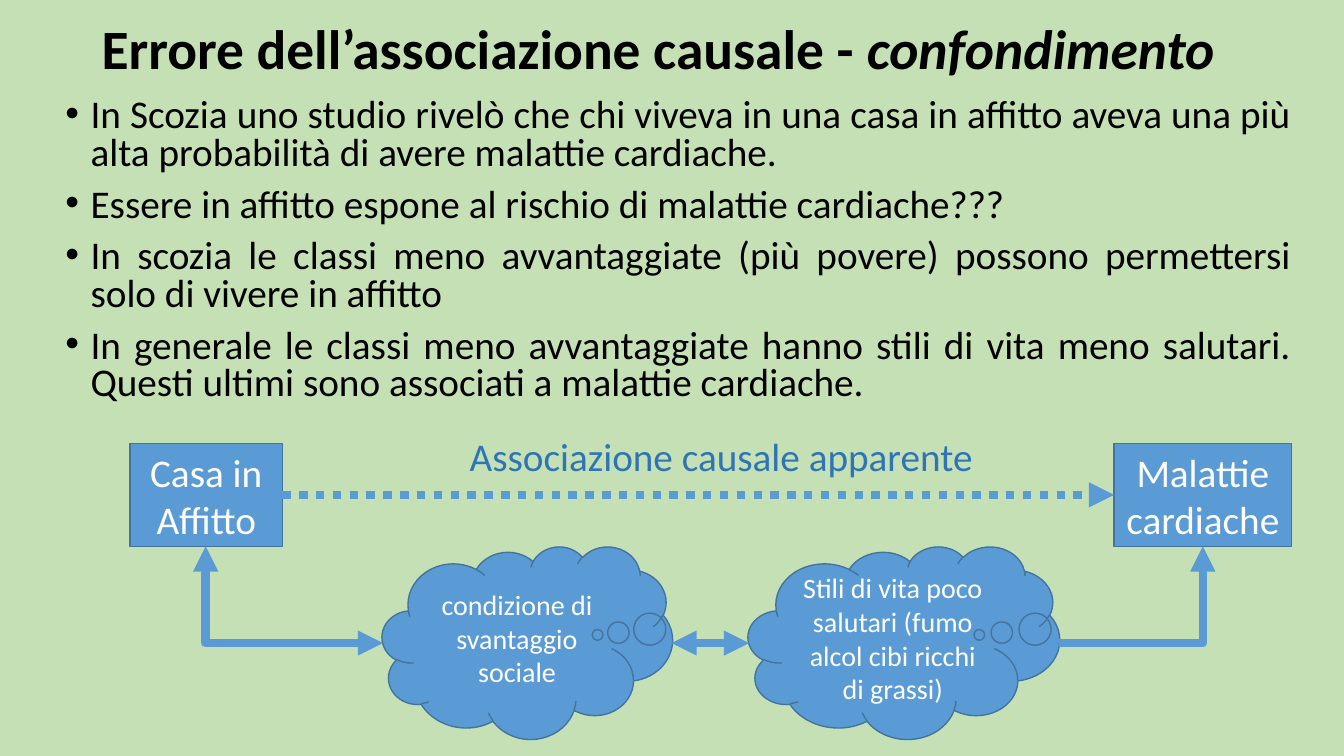
from pptx import Presentation, util as u
from pptx.dml.color import RGBColor
from pptx.enum import dml, shapes, text
from pptx.oxml.ns import qn
from lxml import etree

TITLE = [("Errore dell’associazione causale - ", {}), ("confondimento", {"italic": True})]
POINTS = [
    "In Scozia uno studio rivelò che chi viveva in una casa in affitto aveva una più alta probabilità di avere malattie cardiache.",
    "Essere in affitto espone al rischio di malattie cardiache???",
    "In scozia le classi meno avvantaggiate (più povere) possono permettersi solo di vivere in affitto",
    "In generale le classi meno avvantaggiate hanno stili di vita meno salutari. Questi ultimi sono associati a malattie cardiache.",
]
BOX_TOP, BOX_H = 4.4, 1.02
CLOUD_TOP, CLOUD_H = BOX_TOP + BOX_H, 1.91
FLOW_Y = 6.38


def rgb(value):
    return RGBColor.from_string(value)


def apply(target, values):
    for name, value in values.items():
        setattr(target, name, value)


class Board:
    font = "Calibri"
    ink, white, blue, edge, label = "000000", "FFFFFF", "5B9BD5", "43739E", "2E75B6"

    def __init__(self, prs, background):
        self.s = prs.slides.add_slide(prs.slide_layouts[6])
        self.s.background.fill.solid()
        self.s.background.fill.fore_color.rgb = rgb(background)

    def add_runs(self, p, runs, size, color, **fmt):
        for words, extra in runs:
            r = p.add_run()
            r.text = words
            apply(r.font, {"name": self.font, "size": u.Pt(size), **fmt, **extra})
            r.font.color.rgb = rgb(color)

    def textbox(self, x, y, w, h, **frame):
        sp = self.s.shapes.add_textbox(*map(u.Inches, (x, y, w, h)))
        apply(sp.text_frame, {"word_wrap": True, **frame})
        return sp.text_frame

    def title(self, x, y, w, h, runs):
        tf = self.textbox(x, y, w, h, vertical_anchor=text.MSO_ANCHOR.MIDDLE)
        p = tf.paragraphs[0]
        p.line_spacing = 0.9
        self.add_runs(p, runs, 39.6, self.ink, bold=True)

    def bullets(self, x, y, w, h, points):
        tf = self.textbox(x, y, w, h)
        for i, point in enumerate(points):
            p = tf.add_paragraph() if i else tf.paragraphs[0]
            apply(p, {"alignment": text.PP_ALIGN.JUSTIFY, "line_spacing": 0.8,
                      "space_before": u.Pt(10)})
            pPr = p._p.get_or_add_pPr()
            pPr.set("marL", str(u.Inches(0.25)))
            pPr.set("indent", str(u.Inches(-0.25)))
            etree.SubElement(pPr, qn("a:buFont"), typeface="Arial")
            etree.SubElement(pPr, qn("a:buChar"), char="•")
            self.add_runs(p, [(point, {})], 28, self.ink)

    def caption(self, x, y, w, h, words):
        tf = self.textbox(x, y, w, h, word_wrap=False,
                          auto_size=text.MSO_AUTO_SIZE.SHAPE_TO_FIT_TEXT)
        self.add_runs(tf.paragraphs[0], [(words, {})], 28, self.label)

    def shape(self, kind, x, y, w, h, words, size):
        sp = self.s.shapes.add_shape(kind, *map(u.Inches, (x, y, w, h)))
        sp.shadow.inherit = False
        sp.fill.solid()
        sp.fill.fore_color.rgb = rgb(self.blue)
        sp.line.color.rgb = rgb(self.edge)
        sp.line.width = u.Pt(1)
        apply(sp.text_frame, {"word_wrap": True, "vertical_anchor": text.MSO_ANCHOR.MIDDLE})
        p = sp.text_frame.paragraphs[0]
        p.alignment = text.PP_ALIGN.CENTER
        self.add_runs(p, [(words, {})], size, self.white)
        return sp

    def box(self, x, w, words):
        return self.shape(shapes.MSO_SHAPE.RECTANGLE, x, BOX_TOP, w, BOX_H, words, 28)

    def cloud(self, x, w, words):
        sp = self.shape(shapes.MSO_SHAPE.CLOUD_CALLOUT, x, CLOUD_TOP, w, CLOUD_H, words, 20)
        sp.adjustments[0], sp.adjustments[1] = 0.242, -0.04

    def arrow(self, x1, y1, x2, y2, both=False, kind=shapes.MSO_CONNECTOR.STRAIGHT):
        c = self.s.shapes.add_connector(kind, *map(u.Inches, (x1, y1, x2, y2)))
        c.line.color.rgb = rgb(self.blue)
        c.line.width = u.Pt(6)
        ln = c._element.spPr.find(qn("a:ln"))
        if both:
            etree.SubElement(ln, qn("a:headEnd"), type="triangle")
        etree.SubElement(ln, qn("a:tailEnd"), type="triangle")
        etree.SubElement(c._element.spPr, qn("a:effectLst"))
        return c

    def corner(self, x1, y1, x2, y2, both=False, turn=0):
        c = self.arrow(x1, y1, x2, y2, both, shapes.MSO_CONNECTOR.ELBOW)
        spPr = c._element.spPr
        spPr.find(qn("a:prstGeom")).set("prst", "bentConnector2")
        spPr.find(qn("a:xfrm")).set("rot", str(turn * 60000))

    def dotted(self, start, end):
        y = BOX_TOP + BOX_H / 2
        c = self.arrow(2.8, y, 11.05, y)
        c.begin_connect(start, 3)
        c.end_connect(end, 1)
        c.line.dash_style = dml.MSO_LINE.ROUND_DOT


def main():
    prs = Presentation()
    prs.slide_width, prs.slide_height = u.Inches(13.33), u.Inches(7.5)
    b = Board(prs, "C5E0B4")
    b.title(0.91, 0.19, 11.5, 0.64, TITLE)
    b.bullets(0.55, 0.93, 12.35, 3.2, POINTS)
    rent = b.box(1.29, 1.51, "Casa in Affitto")
    b.cloud(3.79, 2.88, "condizione di svantaggio sociale")
    disease = b.box(11.05, 1.76, "Malattie cardiache")
    b.cloud(7.42, 3.09, "Stili di vita poco salutari (fumo alcol cibi ricchi di grassi)")
    b.corner(3.4, 5.02, 2.44, 6.78, both=True, turn=270)
    b.arrow(6.66, FLOW_Y, 7.43, FLOW_Y, both=True)
    b.corner(10.5, FLOW_Y, 11.93, CLOUD_TOP)
    b.dotted(rent, disease)
    b.caption(4.56, 4.24, 5.24, 0.57, "Associazione causale apparente")
    prs.save("out.pptx")


if __name__ == "__main__":
    main()
